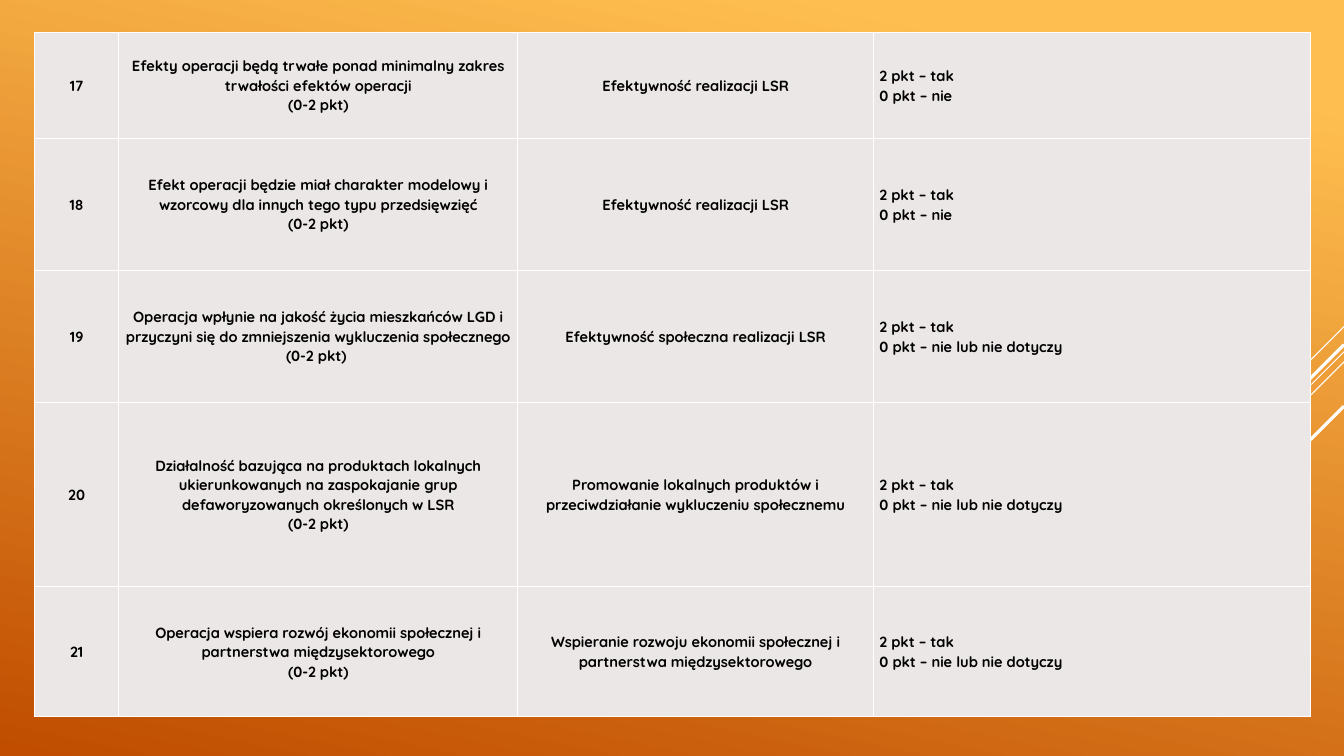
import dataclasses
import itertools

import pptx
import pptx.dml.color
import pptx.enum.shapes
import pptx.enum.text
import pptx.oxml
import pptx.oxml.ns
import pptx.util

Inches = pptx.util.Inches
Pt = pptx.util.Pt
ALIGN = pptx.enum.text.PP_ALIGN


@dataclasses.dataclass(frozen=True)
class Theme:
    """Colours and type of the slide."""
    font: str = "Quicksand"
    size: float = 10.5
    spacing: float = 1.07
    ink: str = "000000"
    rule: str = "FFFFFF"
    cell: str = "ECE7E7"
    glow: str = "FFBF50"
    ember: str = "C04D00"


THEME = Theme()
POINTS = "(0-2 pkt)"
YES = "2 pkt – tak"
NO = "0 pkt – nie"
NO_OR_NA = "0 pkt – nie lub nie dotyczy"
FIRST_NUMBER = 17
COLUMN_WIDTHS = (0.84, 3.96, 3.53, 4.34)
ROW_HEIGHTS = (1.05, 1.31, 1.31, 1.83, 1.29)
CRITERIA = (
    (("Efekty operacji będą trwałe ponad minimalny zakres trwałości efektów operacji", POINTS),
     "Efektywność realizacji LSR", NO),
    (("Efekt operacji będzie miał charakter modelowy i wzorcowy dla innych tego typu przedsięwzięć", POINTS),
     "Efektywność realizacji LSR", NO),
    (("Operacja wpłynie na jakość życia mieszkańców LGD i przyczyni się do zmniejszenia "
      "wykluczenia społecznego (0-2 pkt) ",),
     "Efektywność społeczna realizacji LSR", NO_OR_NA),
    (("Działalność bazująca na produktach lokalnych ukierunkowanych na zaspokajanie grup "
      "defaworyzowanych określonych w LSR", POINTS),
     "Promowanie lokalnych produktów i przeciwdziałanie wykluczeniu społecznemu", NO_OR_NA),
    (("Operacja wspiera rozwój ekonomii społecznej i partnerstwa międzysektorowego", POINTS),
     "Wspieranie rozwoju ekonomii społecznej i partnerstwa międzysektorowego", NO_OR_NA),
)
STREAKS = ((3.24, 1.0, 0.75), (3.49, 3.26, 0.75), (3.59, 2.07, 0.75), (3.42, 1.91, 2.25), (4.03, 1.39, 2.25))


def rgb(value):
    """Return the colour for a hex string."""
    return pptx.dml.color.RGBColor.from_string(value)


def write(frame, paragraphs, *, align=ALIGN.CENTER, size=THEME.size, color=THEME.ink, bold=True):
    """Fill a text frame with formatted paragraphs."""
    frame.text = "\n".join(paragraphs)
    for paragraph in frame.paragraphs:
        paragraph.alignment = align
        paragraph.line_spacing = THEME.spacing
        for run in paragraph.runs:
            run.font.name = THEME.font
            run.font.size = Pt(size)
            run.font.bold = bold
            run.font.color.rgb = rgb(color)


def paint_background(slide):
    """Give the slide its slanted orange gradient."""
    fill = slide.background.fill
    fill.gradient()
    fill.gradient_angle = 258
    for stop, position, color in zip(fill.gradient_stops, (0.1, 1), (THEME.glow, THEME.ember)):
        stop.position = position
        stop.color.rgb = rgb(color)


def draw_streaks(slide, right):
    """Draw the diagonal streaks that run down and left from the right edge."""
    for top, reach, weight in STREAKS:
        streak = slide.shapes.add_connector(
            pptx.enum.shapes.MSO_CONNECTOR.STRAIGHT,
            Inches(right), Inches(top), Inches(right - reach), Inches(top + reach))
        streak.line.color.rgb = rgb(THEME.rule)
        streak.line.width = Pt(weight)
        pptx.oxml.ns.qn("a:effectLst")
        streak._element.spPr.append(pptx.oxml.parse_xml(
            f'<a:effectLst {pptx.oxml.ns.nsdecls("a")}/>'))


def format_cell(cell):
    """Set the fill, insets, anchor and borders of a cell."""
    cell.margin_left = cell.margin_right = Inches(0.06)
    cell.margin_top = cell.margin_bottom = 0
    cell.vertical_anchor = pptx.enum.text.MSO_ANCHOR.MIDDLE
    properties = cell._tc.get_or_add_tcPr()
    for side in ("lnL", "lnR", "lnT", "lnB"):
        properties.append(pptx.oxml.parse_xml(
            f'<a:{side} {pptx.oxml.ns.nsdecls("a")} w="{Pt(1)}"><a:solidFill>'
            f'<a:srgbClr val="{THEME.rule}"/></a:solidFill></a:{side}>'))
    cell.fill.solid()
    cell.fill.fore_color.rgb = rgb(THEME.cell)


def add_criteria(slide, left, top, width, height):
    """Place the table of scoring criteria in the given box."""
    table = slide.shapes.add_table(
        len(ROW_HEIGHTS), len(COLUMN_WIDTHS),
        Inches(left), Inches(top), Inches(width), Inches(height)).table
    table.first_row = table.horz_banding = False
    for column, share in zip(table.columns, COLUMN_WIDTHS):
        column.width = Inches(width * share / sum(COLUMN_WIDTHS))
    for row, share in zip(table.rows, ROW_HEIGHTS):
        row.height = Inches(height * share / sum(ROW_HEIGHTS))
    numbered = zip(itertools.count(FIRST_NUMBER), table.rows, CRITERIA)
    for number, row, (criterion, goal, refusal) in numbered:
        contents = ((str(number),), criterion, (goal,), (YES, refusal))
        aligns = (ALIGN.CENTER, ALIGN.CENTER, ALIGN.CENTER, ALIGN.LEFT)
        for cell, paragraphs, align in zip(row.cells, contents, aligns):
            format_cell(cell)
            write(cell.text_frame, paragraphs, align=align)


def main():
    """Build and save the slide."""
    deck = pptx.Presentation()
    deck.slide_width, deck.slide_height = Inches(13.33), Inches(7.5)
    slide = deck.slides.add_slide(deck.slide_layouts[6])
    paint_background(slide)
    draw_streaks(slide, 13.33)
    add_criteria(slide, 0.34, 0.32, 12.66, 6.79)
    deck.save("out.pptx")


if __name__ == "__main__":
    main()
